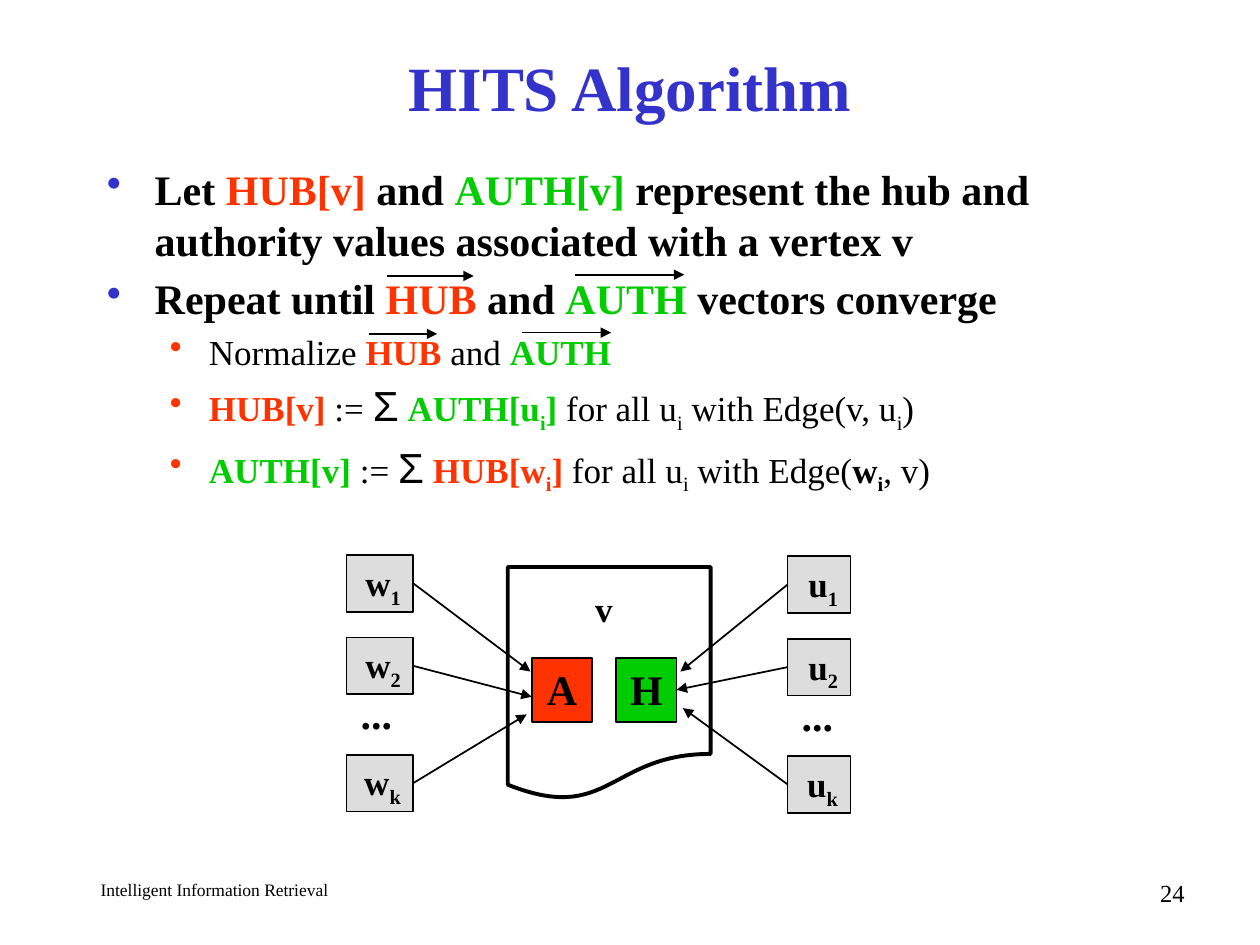
import pptx
import pptx.util
import pptx.dml.color
import pptx.enum.shapes
import pptx.enum.text
import pptx.oxml
import pptx.oxml.ns

HUES = {"ink": "000000", "blue": "3333CC", "red": "FF3300",
        "green": "00CC00", "gray": "DDDDDD"}
FLAGS = {"r": "red", "g": "green", "t": "blue"}
KIND = pptx.enum.shapes.MSO_SHAPE
ALIGN = pptx.enum.text.PP_ALIGN
ANCHOR = pptx.enum.text.MSO_ANCHOR


class Deck:
    """Holds the style and the current slide, on a grid of 100 columns by 75 rows."""

    font = "Times New Roman"

    def __init__(self):
        self.file = pptx.Presentation()
        self.file.slide_width = pptx.util.Inches(10)
        self.file.slide_height = pptx.util.Inches(7.5)
        self.slide = self.file.slides.add_slide(self.file.slide_layouts[6])
        self.shapes = self.slide.shapes

    def grid(self, *cells):
        wide, high = self.file.slide_width / 100, self.file.slide_height / 75
        return [round(n * (high if i % 2 else wide)) for i, n in enumerate(cells)]

    def hue(self, name):
        return pptx.dml.color.RGBColor.from_string(HUES[name])

    def node(self, parent, tag, **attrs):
        item = pptx.oxml.parse_xml(
            f"<a:{tag} {pptx.oxml.ns.nsdecls('a')}/>")
        for key, value in attrs.items():
            item.set(key, str(value))
        parent.append(item)
        return item

    def fill(self, para, runs, size, align=None):
        """Fill a paragraph; flags: b bold, r red, g green, t blue, s sub, m math sign."""
        para.alignment = align
        for text, flags in runs:
            run = para.add_run()
            run.text = text
            font = run.font
            font.name = "Arial" if "m" in flags else self.font
            font.size = pptx.util.Pt(24 if "m" in flags else size)
            font.bold = "b" in flags
            name = next((FLAGS[f] for f in flags if f in FLAGS), "ink")
            font.color.rgb = self.hue(name)
            if "s" in flags:
                run._r.get_or_add_rPr().set("baseline", "-25000")

    def text(self, cells, runs, size, align=None, anchor=ANCHOR.TOP, wrap=True):
        frame = self.shapes.add_textbox(*self.grid(*cells)).text_frame
        frame.word_wrap = wrap
        frame.vertical_anchor = anchor
        self.fill(frame.paragraphs[0], runs, size, align)

    def list(self, cells, rows):
        frame = self.shapes.add_textbox(*self.grid(*cells)).text_frame
        frame.word_wrap = True
        for i, (level, runs) in enumerate(rows):
            para = frame.add_paragraph() if i else frame.paragraphs[0]
            size, left, hang, name = [(24, 0.38, 0.38, "blue"),
                                      (20, 0.81, 0.31, "red")][level]
            para.level = level
            para.space_before = pptx.util.Pt(size * 0.2)
            props = para._p.get_or_add_pPr()
            props.set("marL", str(pptx.util.Inches(left)))
            props.set("indent", str(-pptx.util.Inches(hang)))
            tint = self.node(props, "buClr")
            self.node(tint, "srgbClr", val=HUES[name])
            self.node(props, "buChar", char="•")
            self.fill(para, runs, size)

    def box(self, cells, fill=None, runs=(), size=20, align=None,
            kind=KIND.RECTANGLE, width=1):
        shape = self.shapes.add_shape(kind, *self.grid(*cells))
        shape.shadow.inherit = False
        if fill:
            shape.fill.solid()
            shape.fill.fore_color.rgb = self.hue(fill)
        else:
            shape.fill.background()
        shape.line.color.rgb = self.hue("ink")
        shape.line.width = pptx.util.Pt(width)
        shape.text_frame.vertical_anchor = ANCHOR.TOP
        self.fill(shape.text_frame.paragraphs[0], runs, size, align)
        return shape

    def arrow(self, cells, start=None, end=None):
        line = self.shapes.add_connector(
            pptx.enum.shapes.MSO_CONNECTOR.STRAIGHT, *self.grid(*cells))
        line.line.color.rgb = self.hue("ink")
        line.line.width = pptx.util.Pt(1)
        self.node(line.line._get_or_add_ln(), "tailEnd", type="triangle")
        self.node(line._element.spPr, "effectLst")
        if start:
            line.begin_connect(*start)
        if end:
            line.end_connect(*end)

    def save(self):
        self.file.save("out.pptx")


def main():
    deck = Deck()
    deck.text((7, 69.3, 37.5, 2.5), [("Intelligent Information Retrieval", "")], 10)
    deck.text((74.2, 69.2, 20.8, 2.5), [("24", "")], 14, ALIGN.RIGHT)
    deck.text((7.5, 3.3, 85, 7.1), [("HITS Algorithm", "bt")], 36,
              ALIGN.CENTER, ANCHOR.MIDDLE)

    whole = [(" for all u", ""), ("i", "s")]
    total = [(" := ", ""), ("Σ", "m"), (" ", "")]
    deck.list((7.5, 12.5, 85, 55), [
        (0, [("Let ", "b"), ("HUB[v]", "br"), (" and ", "b"), ("AUTH[v]", "bg"),
             (" represent the hub and authority values associated with a vertex v", "b")]),
        (0, [("Repeat until ", "b"), ("HUB", "br"), (" and ", "b"),
             ("AUTH", "bg"), (" vectors converge", "b")]),
        (1, [("Normalize ", ""), ("HUB", "br"), (" and ", ""), ("AUTH", "bg")]),
        (1, [("HUB[v]", "br"), *total, ("AUTH[u", "bg"), ("i", "bgs"), ("]", "bg"),
             *whole, (" with Edge(v, u", ""), ("i", "s"), (")", "")]),
        (1, [("AUTH[v]", "bg"), *total, ("HUB[w", "br"), ("i", "brs"), ("]", "br"),
             *whole, (" with Edge(", ""), ("w", "b"), ("i", "bs"), (", v)", "")]),
    ])
    for left, right, row in [(30.7, 37.6, 21.9), (45.6, 54.3, 21.8),
                             (29.3, 34.7, 26.5), (41.4, 48.5, 26.4)]:
        deck.arrow((left, row, right, row))

    deck.box((40.3, 45, 16.1, 18.5), kind=KIND.FLOWCHART_DOCUMENT, width=2.25)
    deck.box((42.2, 52.2, 4.8, 5.1), "red", [("A", "b")], 24, ALIGN.CENTER)
    hub = deck.box((48.9, 52.2, 4.8, 5.1), "green", [("H", "b")], 24, ALIGN.CENTER)
    deck.text((46.2, 46.1, 3.4, 4.3), [("v", "b")], 20, ALIGN.RIGHT, wrap=False)

    sides = [
        ("u", 62.5, 5, 0.1, 1, [(54, 53.3), (53.8, 54.9), (54.2, 56.2)]),
        ("w", 27.5, 5.3, 0, 3, [(42.1, 53.3), (42.2, 55.3), (41.8, 56.7)]),
    ]
    for name, left, width, drop, side, tips in sides:
        for mark, top, tip in zip("12k", (44.05, 50.6, 59.9), tips):
            page = deck.box((left, top + drop, width, 4.5), "gray",
                            [(name, "b"), (mark, "bs")], 20, ALIGN.RIGHT)
            goal = (hub, 3) if (name, mark) == ("u", "2") else None
            deck.arrow((left, top, *tip), (page, side), goal)
        deck.text((left + 0.1, 54.1 + drop, 4.5, 5), [("...", "b")], 24, ALIGN.RIGHT)
    deck.save()


if __name__ == "__main__":
    main()
